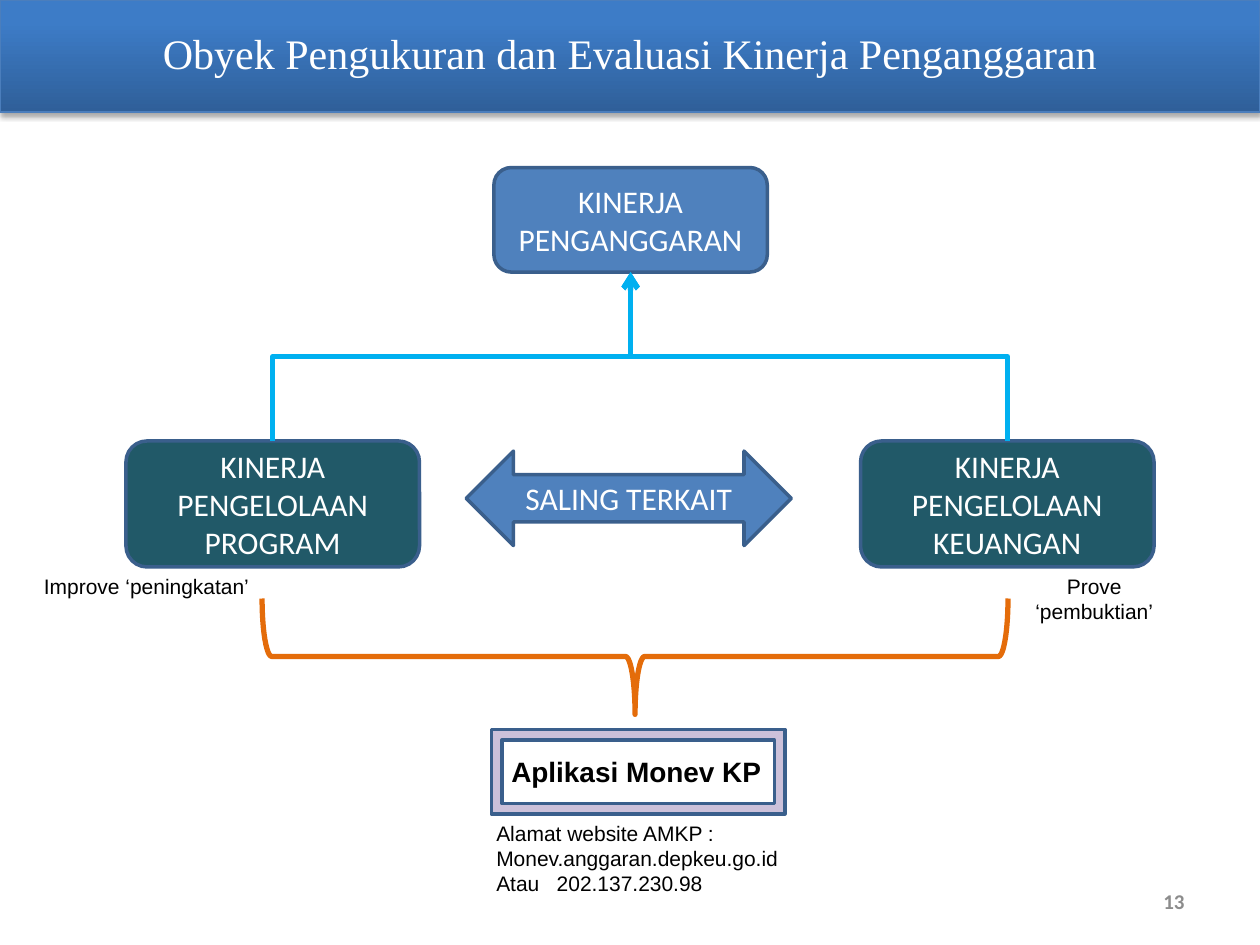
from lxml import etree
from pptx import Presentation
from pptx.dml.color import RGBColor
from pptx.enum.shapes import MSO_CONNECTOR, MSO_SHAPE
from pptx.enum.text import MSO_ANCHOR, PP_ALIGN
from pptx.oxml.ns import qn
from pptx.util import Inches, Pt

LEFT, CENTER, RIGHT = PP_ALIGN.LEFT, PP_ALIGN.CENTER, PP_ALIGN.RIGHT
MIDDLE, TOP = MSO_ANCHOR.MIDDLE, MSO_ANCHOR.TOP
BOTTOM_SITE, TOP_SITE = 2, 0

COLORS = {
    "band_dark": "2F5F99", "band_light": "3D7CC7", "band_line": "4B7EBC",
    "blue": "4F81BD", "teal": "215968", "outline": "3A5F8C",
    "arrow": "00B0F0", "brace": "E46C0A", "frame": "CCC1DA",
    "white": "FFFFFF", "black": "000000", "gray": "8C8C8C",
}


def color(name):
    return RGBColor.from_string(COLORS[name])


def add_element(parent, tag, **attributes):
    element = etree.SubElement(parent, qn(tag))
    for name, value in attributes.items():
        element.set(name, str(value))
    return element


def style_paragraph(paragraph, size, font_name, font_color, align, bold=False):
    paragraph.alignment = align
    font = paragraph.font
    font.size, font.name, font.bold = Pt(size), font_name, bold
    font.color.rgb = color(font_color)


def add_shape(slide, kind, box, fill=None, line="outline", width=2, text=None):
    shape = slide.shapes.add_shape(kind, *map(Inches, box))
    shape.shadow.inherit = False
    if fill:
        shape.fill.solid()
        shape.fill.fore_color.rgb = color(fill)
    else:
        shape.fill.background()
    shape.line.color.rgb = color(line)
    shape.line.width = Pt(width)
    if text:
        frame = shape.text_frame
        frame.word_wrap, frame.vertical_anchor = True, MIDDLE
        frame.text = text
        style_paragraph(frame.paragraphs[0], 18, "Calibri", "white", CENTER)
    return shape


def add_text(slide, box, lines, size=12, font_name="Arial", font_color="black",
             align=LEFT, bold=False, wrap=True, anchor=TOP, tab=None):
    frame = slide.shapes.add_textbox(*map(Inches, box)).text_frame
    frame.word_wrap, frame.vertical_anchor = wrap, anchor
    frame.text = "\n".join(lines)
    for paragraph in frame.paragraphs:
        if tab and "\t" in paragraph.text:
            tabs = add_element(paragraph._p.get_or_add_pPr(), "a:tabLst")
            add_element(tabs, "a:tab", pos=Inches(tab), algn="l")
        style_paragraph(paragraph, size, font_name, font_color, align, bold)


def add_title_band(slide):
    band = add_shape(slide, MSO_SHAPE.RECTANGLE, (0, 0, 10, 0.89),
                     line="band_line", width=0.75)
    band.fill.gradient()
    band.fill.gradient_angle = 90
    stops = zip(band.fill.gradient_stops, (0, 0.8), ("band_dark", "band_light"))
    for stop, position, name in stops:
        stop.position = position
        stop.color.rgb = color(name)
    effects = band._element.spPr.find(qn("a:effectLst"))
    shadow = add_element(effects, "a:outerShdw", blurRad=Pt(3.1), dist=Pt(1.8),
                         dir=90 * 60000, rotWithShape=0)
    shade = add_element(shadow, "a:srgbClr", val=COLORS["black"])
    add_element(shade, "a:alpha", val=35000)
    # Behind the title placeholder
    slide.shapes.element.insert(2, band._element)


def add_title(slide, text):
    title = slide.shapes.title
    title.left, title.top, title.width, title.height = map(
        Inches, (0.5, -0.04, 9, 0.92))
    title.text_frame.text = text
    title.text_frame.vertical_anchor = MIDDLE
    style_paragraph(title.text_frame.paragraphs[0], 24, "Times New Roman",
                    "white", CENTER)


def add_upward_elbow(slide, source, target):
    """Join the top of source to the bottom of target, leaving vertically."""
    start_x, start_y = source.left + source.width // 2, source.top
    end_x, end_y = target.left + target.width // 2, target.top + target.height
    connector = slide.shapes.add_connector(
        MSO_CONNECTOR.ELBOW, start_x, start_y, end_x, end_y)
    connector.begin_connect(source, TOP_SITE)
    connector.end_connect(target, BOTTOM_SITE)

    # A quarter turn swaps width and height around the same centre
    run, rise = abs(end_x - start_x), start_y - end_y
    connector.left = (start_x + end_x - rise) // 2
    connector.top = (start_y + end_y - run) // 2
    connector.width, connector.height = rise, run
    from_left = start_x < end_x
    transform = connector._element.spPr.find(qn("a:xfrm"))
    transform.set("rot", str((90 if from_left else 270) * 60000))
    transform.set("flipH", "1" if from_left else "0")
    transform.set("flipV", "1")

    connector.line.color.rgb = color("arrow")
    connector.line.width = Pt(3)
    add_element(connector.line._get_or_add_ln(), "a:tailEnd", type="arrow")
    add_element(connector._element.spPr, "a:effectLst")


def main():
    presentation = Presentation()
    presentation.slide_width, presentation.slide_height = Inches(10), Inches(7.5)
    slide = presentation.slides.add_slide(presentation.slide_layouts[5])

    # Header and page number
    add_title_band(slide)
    add_title(slide, "Obyek Pengukuran dan Evaluasi Kinerja Penganggaran")
    add_text(slide, (7.17, 6.95, 2.33, 0.4), ["13"], font_name="Calibri",
             font_color="gray", align=RIGHT, bold=True, anchor=MIDDLE)

    # Performance boxes and the arrows that lead up
    budgeting = add_shape(slide, MSO_SHAPE.ROUNDED_RECTANGLE,
                          (3.92, 1.33, 2.17, 0.83), "blue",
                          text="KINERJA PENGANGGARAN")
    components = [
        add_shape(slide, MSO_SHAPE.ROUNDED_RECTANGLE, (left, 3.5, 2.33, 1),
                  "teal", text=f"KINERJA PENGELOLAAN {subject}")
        for left, subject in ((1, "PROGRAM"), (6.83, "KEUANGAN"))
    ]
    for component in reversed(components):
        add_upward_elbow(slide, component, budgeting)
    add_shape(slide, MSO_SHAPE.LEFT_RIGHT_ARROW, (3.7, 3.58, 2.58, 0.75),
              "blue", text="SALING TERKAIT")

    # Brace down to the application
    brace = add_shape(slide, MSO_SHAPE.RIGHT_BRACE, (4.58, 2.25, 0.92, 5.92),
                      line="brace", width=3)
    brace.rotation = 90
    add_shape(slide, MSO_SHAPE.FRAME, (3.9, 5.79, 2.33, 0.67), "frame")
    add_text(slide, (3.96, 5.94, 2.21, 0.37), ["Aplikasi Monev KP"], size=16,
             bold=True, wrap=False)
    add_text(slide, (3.84, 6.46, 2.45, 0.71),
             ["Alamat website AMKP :", "Monev.anggaran.depkeu.go.id",
              "Atau\t202.137.230.98"], wrap=False, tab=0.48)

    # Captions under the components
    add_text(slide, (8.06, 4.5, 1.25, 0.5), ["Prove ‘pembuktian’"], align=CENTER)
    add_text(slide, (0.25, 4.5, 1.92, 0.3), ["Improve ‘peningkatan’"])

    presentation.save("out.pptx")


if __name__ == "__main__":
    main()
